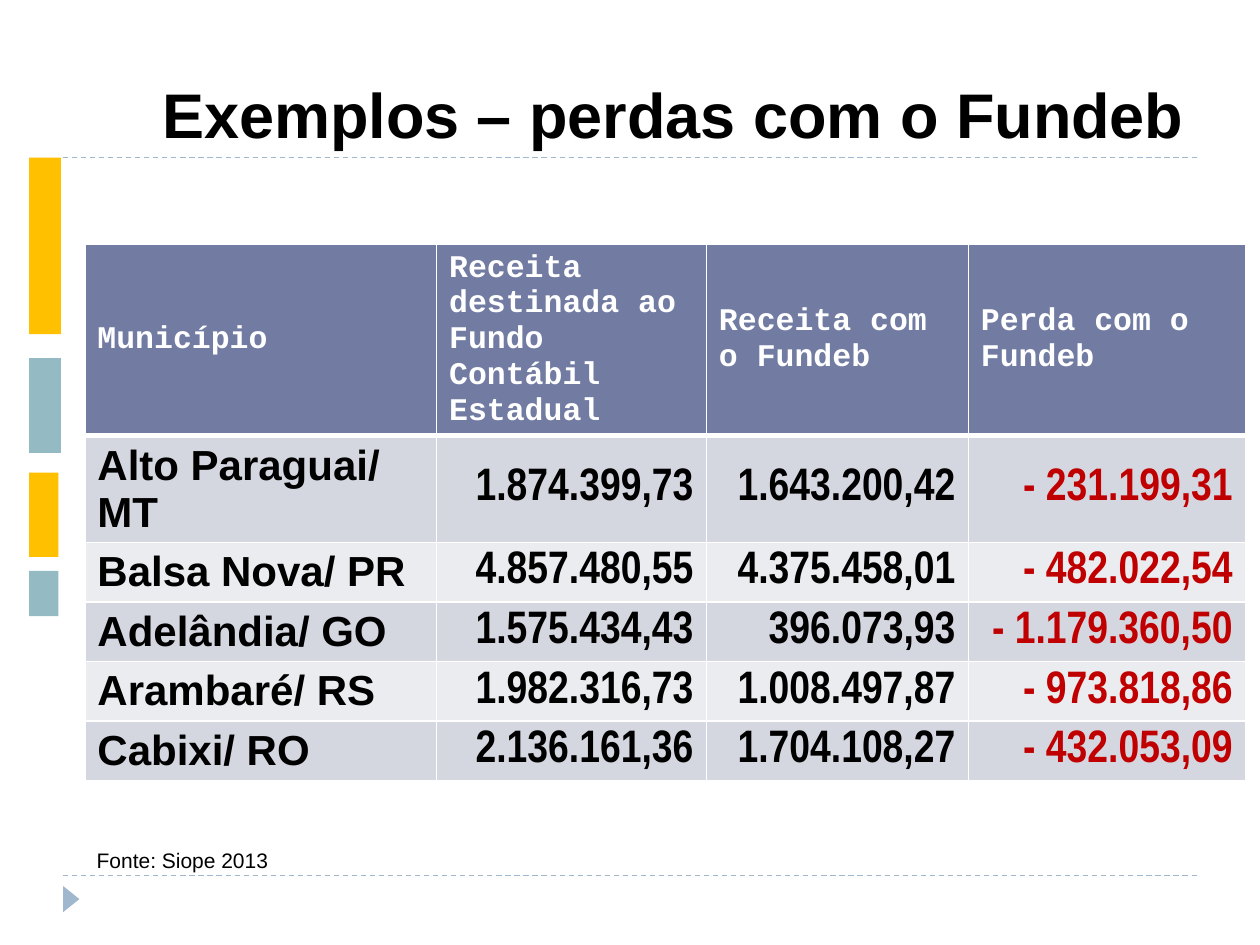
import pptx
import pptx.util
import pptx.dml.color
import pptx.enum.dml
import pptx.enum.shapes
import pptx.enum.text
import pptx.oxml.ns
from lxml import etree

Cm = pptx.util.Cm
Pt = pptx.util.Pt
Align = pptx.enum.text.PP_ALIGN
Anchor = pptx.enum.text.MSO_ANCHOR
Shape = pptx.enum.shapes.MSO_SHAPE
qn = pptx.oxml.ns.qn


def color(hex_code):
    return pptx.dml.color.RGBColor.from_string(hex_code)


class SlideBuilder:
    black, white, red = "000000", "FFFFFF", "C00000"
    yellow, teal, blue = "FFC000", "94BAC3", "9FB8CD"
    header_fill = "727CA3"
    band_fills = ("D5D7E0", "EBECF0")

    def __init__(self, slide):
        self.slide = slide

    def add_text(self, paragraph, text, size, font="Arial", ink=black, bold=False,
                 align=Align.LEFT):
        paragraph.alignment = align
        run = paragraph.add_run()
        run.text = text
        run.font.name = font
        run.font.size = Pt(size)
        run.font.bold = bold
        run.font.color.rgb = color(ink)

    def title(self, text, left, top, width, height):
        heading = self.slide.shapes.title
        heading.left, heading.top = Cm(left), Cm(top)
        heading.width, heading.height = Cm(width), Cm(height)
        frame = heading.text_frame
        frame.auto_size = pptx.enum.text.MSO_AUTO_SIZE.NONE
        frame.vertical_anchor = Anchor.BOTTOM
        self.add_text(frame.paragraphs[0], text, 36, bold=True, align=Align.RIGHT)

    def dashed_rule(self, left, right, y):
        rule = self.slide.shapes.add_connector(
            pptx.enum.shapes.MSO_CONNECTOR.STRAIGHT, Cm(left), Cm(y), Cm(right), Cm(y))
        rule.line.color.rgb = color(self.blue)
        rule.line.width = Pt(0.75)
        rule.line.dash_style = pptx.enum.dml.MSO_LINE.DASH
        etree.SubElement(rule.element.spPr, qn("a:effectLst"))

    def block(self, kind, left, top, width, height, fill, rotation=0):
        block = self.slide.shapes.add_shape(kind, Cm(left), Cm(top), Cm(width), Cm(height))
        block.shadow.inherit = False
        block.fill.solid()
        block.fill.fore_color.rgb = color(fill)
        block.line.fill.background()
        block.rotation = rotation

    def label(self, text, left, top, width, height, size):
        box = self.slide.shapes.add_textbox(Cm(left), Cm(top), Cm(width), Cm(height))
        box.text_frame.word_wrap = False
        box.text_frame.auto_size = pptx.enum.text.MSO_AUTO_SIZE.SHAPE_TO_FIT_TEXT
        self.add_text(box.text_frame.paragraphs[0], text, size)

    def borders(self, cell, top, bottom):
        properties = cell._tc.get_or_add_tcPr()
        for side, points in (("L", 1), ("R", 1), ("T", top), ("B", bottom)):
            edge = etree.SubElement(properties, qn(f"a:ln{side}"), w=str(Pt(points)))
            paint = etree.SubElement(edge, qn("a:solidFill"))
            etree.SubElement(paint, qn("a:srgbClr"), val=self.white)

    def table(self, rows, left, top, column_widths, row_heights):
        table = self.slide.shapes.add_table(
            len(rows), len(column_widths), Cm(left), Cm(top),
            Cm(sum(column_widths)), Cm(sum(row_heights))).table
        for column, width in zip(table.columns, column_widths):
            column.width = Cm(width)
        for row, height in zip(table.rows, row_heights):
            row.height = Cm(height)
        last_column = len(column_widths) - 1
        for r, values in enumerate(rows):
            for c, value in enumerate(values):
                cell = table.cell(r, c)
                cell.vertical_anchor = Anchor.MIDDLE
                self.borders(cell, top=3 if r == 1 else 1, bottom=3 if r == 0 else 1)
                cell.fill.solid()
                fill = self.band_fills[(r - 1) % 2] if r else self.header_fill
                cell.fill.fore_color.rgb = color(fill)
                paragraph = cell.text_frame.paragraphs[0]
                if r == 0:
                    self.add_text(paragraph, value, 18, "Courier New", self.white, True)
                elif c == 0:
                    self.add_text(paragraph, value, 24, bold=True)
                else:
                    ink = self.red if c == last_column else self.black
                    self.add_text(paragraph, value, 26, "Arial Narrow", ink, True,
                                  Align.RIGHT)


def main():
    presentation = pptx.Presentation()
    presentation.slide_width, presentation.slide_height = Cm(25.4), Cm(19.05)
    builder = SlideBuilder(presentation.slides.add_slide(presentation.slide_layouts[5]))

    for rule_y in (17.65, 3.18):
        builder.dashed_rule(1.27, 24.13, rule_y)
    builder.block(Shape.ISOSCELES_TRIANGLE, 1.17, 17.96, 0.53, 0.33, builder.blue, 90)
    for top, width, height, fill in (
        (3.18, 0.64, 3.56, builder.yellow),
        (7.22, 0.64, 1.91, builder.teal),
        (9.53, 0.59, 1.7, builder.yellow),
        (11.51, 0.59, 0.91, builder.teal),
    ):
        builder.block(Shape.RECTANGLE, 0.59, top, width, height, fill)

    builder.title("Exemplos – perdas com o Fundeb", 1.27, 0.43, 22.86, 2.75)

    losses = [
        ("Município", "Receita destinada ao Fundo Contábil Estadual",
         "Receita com o Fundeb", "Perda com o Fundeb"),
        ("Alto Paraguai/ MT", "1.874.399,73", "1.643.200,42", "- 231.199,31"),
        ("Balsa Nova/ PR", "4.857.480,55", "4.375.458,01", "- 482.022,54"),
        ("Adelândia/ GO", "1.575.434,43", "396.073,93", "- 1.179.360,50"),
        ("Arambaré/ RS", "1.982.316,73", "1.008.497,87", "- 973.818,86"),
        ("Cabixi/ RO", "2.136.161,36", "1.704.108,27", "- 432.053,09"),
    ]
    builder.table(losses, 1.71, 4.93, (7.09, 5.44, 5.28, 5.59),
                  (3.84, 2.15, 1.2, 1.2, 1.2, 1.2))
    builder.label("Fonte: Siope 2013", 1.7, 16.97, 3.99, 0.76, 12)

    presentation.save("out.pptx")


if __name__ == "__main__":
    main()
